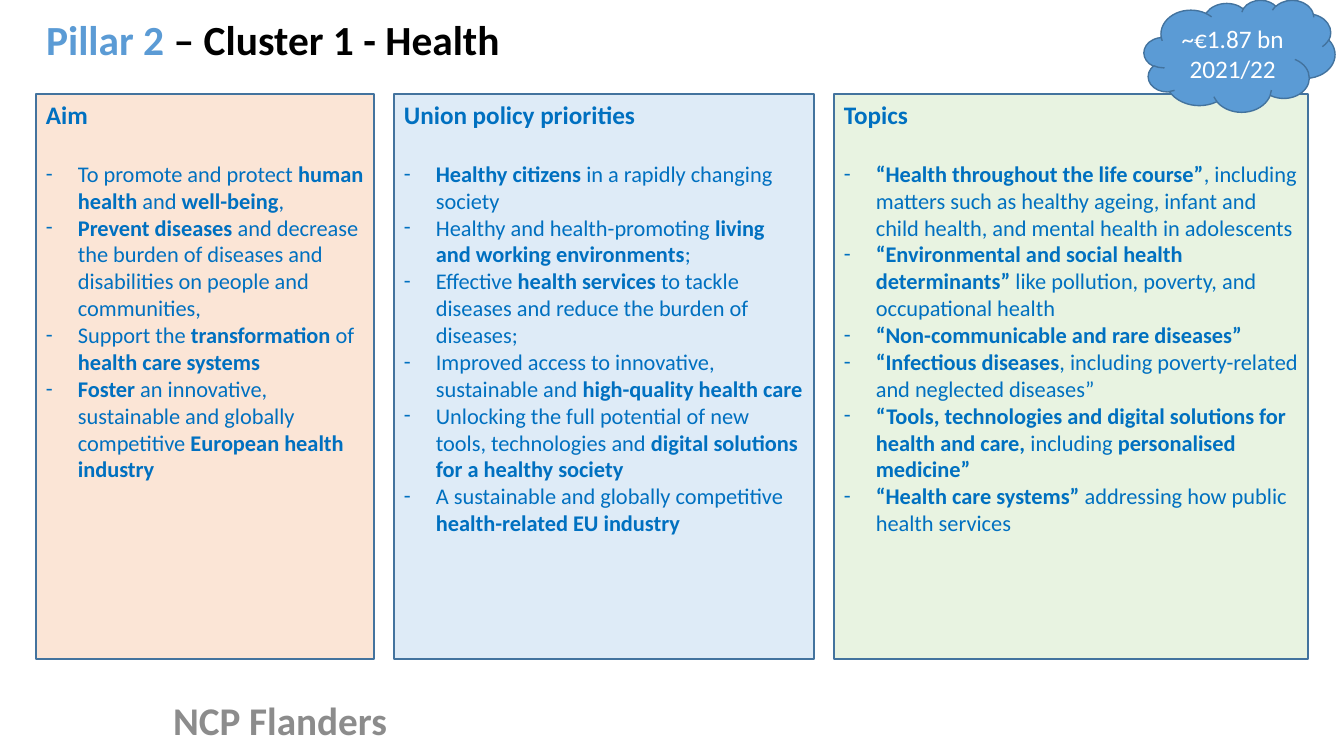
"""Build the Pillar 2 health cluster slide with three text columns."""
from lxml.etree import SubElement as sub
from pptx import Presentation
from pptx.dml.color import RGBColor as RGB
from pptx.enum.shapes import MSO_SHAPE as SHAPE
from pptx.enum.text import MSO_ANCHOR as ANCHOR, PP_ALIGN as ALIGN
from pptx.oxml.ns import qn
from pptx.util import Pt

HEX = {"sky": "5B9BD5", "edge": "43739E", "text": "0070C0", "black": "000000",
       "white": "FFFFFF", "grey": "8C8C8C", "peach": "FBE5D6",
       "ice": "DEEBF7", "mint": "E8F3E1"}
TITLE = [("Pillar 2", "sky"), (" – Cluster 1 - Health", "black")]
FOOTER = "NCP Flanders"
BUDGET = ["~€1.87 bn", "2021/22"]
# Asterisks enclose bold words.
COLUMNS = [
    ("Aim", 338, "peach", [
        "To promote and protect *human health* and *well-being*,",
        "*Prevent diseases *and decrease the burden of diseases and disabilities "
        "on people and communities,",
        "Support the *transformation* of *health care systems*",
        "*Foster* an innovative, sustainable and globally competitive "
        "*European health industry*"]),
    ("Union policy priorities", 420, "ice", [
        "*Healthy citizens *in a rapidly changing society",
        "Healthy and health-promoting *living and working environments*;",
        "Effective *health services *to tackle diseases and reduce the burden "
        "of diseases;",
        "Improved access to innovative, sustainable and *high-quality health care*",
        "Unlocking the full potential of new tools, technologies and "
        "*digital solutions for a healthy society*",
        "A sustainable and globally competitive *health-related EU industry*"]),
    ("Topics", 474, "mint", [
        "*“Health throughout the life course”*, including matters such as healthy "
        "ageing, infant and child health, and mental health in adolescents",
        "*“Environmental and social health determinants” *like pollution, "
        "poverty, and occupational health",
        "*“Non-communicable and rare diseases”*",
        "*“Infectious diseases*, including poverty-related and neglected diseases”",
        "*“Tools, technologies and digital solutions for health and care, *"
        "including *personalised medicine”*",
        "*“Health care systems” *addressing how public health services"]),
]
LEFT, TOP, TALL, GAP, INDENT = 36, 94, 565, 20, 32


def px(n):
    return round(n * 914400 / 100.8)


def box(*sides):
    return [px(n) for n in sides]


def write(para, text, size, color, bold=False):
    run = para.add_run()
    run.text = text
    for key, val in {"name": "Calibri", "size": Pt(size), "bold": bold}.items():
        setattr(run.font, key, val)
    run.font.color.rgb = RGB.from_string(HEX[color])


def draw(slide, kind, sides, fill, anchor):
    shape = slide.shapes.add_shape(kind, *box(*sides))
    shape.shadow.inherit = False
    shape.fill.solid()
    shape.fill.fore_color.rgb = RGB.from_string(HEX[fill])
    shape.line.color.rgb = RGB.from_string(HEX["edge"])
    shape.line.width = Pt(1)
    shape.text_frame.word_wrap = True
    shape.text_frame.vertical_anchor = anchor
    return shape.text_frame


def bullet(frame, text):
    para = frame.add_paragraph()
    para.alignment = ALIGN.LEFT
    props = para._p.get_or_add_pPr()
    props.set("marL", str(px(INDENT)))
    props.set("indent", str(-px(INDENT)))
    sub(props, qn("a:buFont"), typeface="Calibri")
    sub(props, qn("a:buChar"), char="-")
    for i, part in enumerate(text.split("*")):
        if part:
            write(para, part, 16, "text", i % 2 == 1)


def main():
    deck = Presentation()
    deck.slide_width, deck.slide_height = box(1344, 756)
    slide = deck.slides.add_slide(deck.slide_layouts[5])

    title = slide.shapes.title
    title.left, title.top, title.width, title.height = box(36, 19, 942, 51)
    title.text_frame.vertical_anchor = ANCHOR.TOP
    para = title.text_frame.paragraphs[0]
    para.alignment, para.line_spacing = ALIGN.LEFT, 0.8
    for text, color in TITLE:
        write(para, text, 29.6, color, True)

    foot = slide.shapes.add_textbox(*box(53, 700, 454, 40)).text_frame
    foot.word_wrap, foot.vertical_anchor = True, ANCHOR.MIDDLE
    foot.paragraphs[0].alignment = ALIGN.CENTER
    write(foot.paragraphs[0], FOOTER, 28, "grey", True)

    left = LEFT
    for head, wide, fill, items in COLUMNS:
        frame = draw(slide, SHAPE.RECTANGLE, (left, TOP, wide, TALL), fill, ANCHOR.TOP)
        para = frame.paragraphs[0]
        para.alignment, para.space_after = ALIGN.LEFT, Pt(22)
        write(para, head, 18, "text", True)
        for item in items:
            bullet(frame, item)
        left += wide + GAP

    cloud = draw(slide, SHAPE.CLOUD, (1144, 0, 191, 112), "sky", ANCHOR.MIDDLE)
    for i, text in enumerate(BUDGET):
        para = cloud.add_paragraph() if i else cloud.paragraphs[0]
        para.alignment = ALIGN.CENTER
        write(para, text, 18, "white")
    deck.save("out.pptx")


if __name__ == "__main__":
    main()
